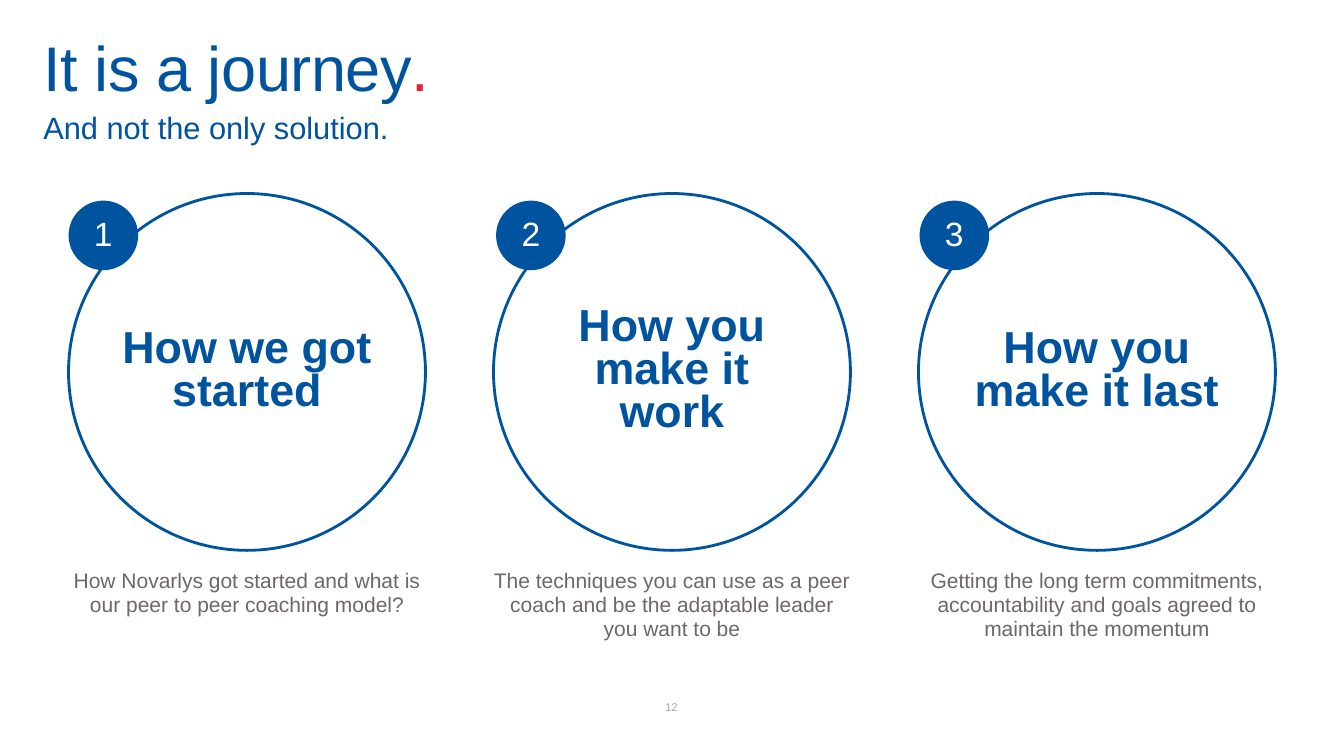
from pptx import Presentation
from pptx.dml.color import RGBColor
from pptx.enum.shapes import MSO_SHAPE
from pptx.enum.text import MSO_ANCHOR, PP_ALIGN
from pptx.util import Inches, Pt

BLUE, RED, WHITE = "00539F", "E81C2D", "FFFFFF"
CAPTION_GREY, NUMBER_GREY = "6E6767", "A9A3A3"

presentation = Presentation()
presentation.slide_width = Inches(13.33)
presentation.slide_height = Inches(7.5)
slide = presentation.slides.add_slide(presentation.slide_layouts[6])


def add_text(box, text, size, color, spacing=1.0, align=PP_ALIGN.CENTER,
             anchor=MSO_ANCHOR.TOP, bold=False):
    """Fill a shape or text box with one formatted paragraph and return it."""
    frame = box.text_frame
    frame.text = text
    frame.word_wrap = True
    frame.vertical_anchor = anchor
    frame.margin_left = frame.margin_right = 0
    frame.margin_top = frame.margin_bottom = 0
    paragraph = frame.paragraphs[0]
    paragraph.alignment = align
    paragraph.line_spacing = spacing
    font = paragraph.runs[0].font
    font.name, font.size, font.bold = "Arial", Pt(size), bold
    font.color.rgb = RGBColor.from_string(color)
    return paragraph


def add_circle(left, top, diameter, fill):
    circle = slide.shapes.add_shape(MSO_SHAPE.OVAL, Inches(left), Inches(top),
                                    Inches(diameter), Inches(diameter))
    circle.shadow.inherit = False
    circle.fill.solid()
    circle.fill.fore_color.rgb = RGBColor.from_string(fill)
    return circle


# Heading
margin, heading_width = Inches(0.43), Inches(12.47)
title = slide.shapes.add_textbox(margin, Inches(0.37), heading_width, Inches(0.72))
title_paragraph = add_text(title, "It is a journey", 45, BLUE, 0.9, PP_ALIGN.LEFT)
full_stop = title_paragraph.add_run()
full_stop.text = "."
full_stop.font.name, full_stop.font.size = "Arial", Pt(45)
full_stop.font.color.rgb = RGBColor.from_string(RED)
for run in title_paragraph.runs:
    run.font._element.set("spc", "-30")

subtitle = slide.shapes.add_textbox(margin, Inches(1.11), heading_width, Inches(0.44))
add_text(subtitle, "And not the only solution.", 22, BLUE, 0.95, PP_ALIGN.LEFT)

# Three steps: heading, caption, left edge of the number badge
steps = [
    ("How we got started",
     "How Novarlys got started and what is our peer to peer coaching model?", 0.68),
    ("How you make it work",
     "The techniques you can use as a peer coach and be the adaptable leader "
     "you want to be", 4.92),
    ("How you make it last",
     "Getting the long term commitments, accountability and goals agreed to "
     "maintain the momentum", 9.12),
]
first_left, last_left, diameter = 0.68, 9.11, 3.54
pitch = (last_left - first_left) / (len(steps) - 1)

for index, (heading, caption, badge_left) in enumerate(steps):
    left = first_left + index * pitch

    ring = add_circle(left, 1.92, diameter, WHITE)
    ring.line.color.rgb = RGBColor.from_string(BLUE)
    ring.line.width = Pt(2)
    add_text(ring, heading, 32, BLUE, 0.8, anchor=MSO_ANCHOR.MIDDLE, bold=True)

    badge = add_circle(badge_left, 1.99, 0.69, BLUE)
    badge.line.fill.background()
    add_text(badge, str(index + 1), 24, WHITE, 0.95, anchor=MSO_ANCHOR.MIDDLE)

    caption_box = slide.shapes.add_textbox(Inches(left), Inches(5.65),
                                           Inches(diameter), Inches(0.27))
    add_text(caption_box, caption, 15, CAPTION_GREY, 0.95)

# Page number
page_number = slide.shapes.add_textbox(Inches(6.39), Inches(6.95),
                                       Inches(0.54), Inches(0.13))
add_text(page_number, "12", 8, NUMBER_GREY)

presentation.save("out.pptx")
